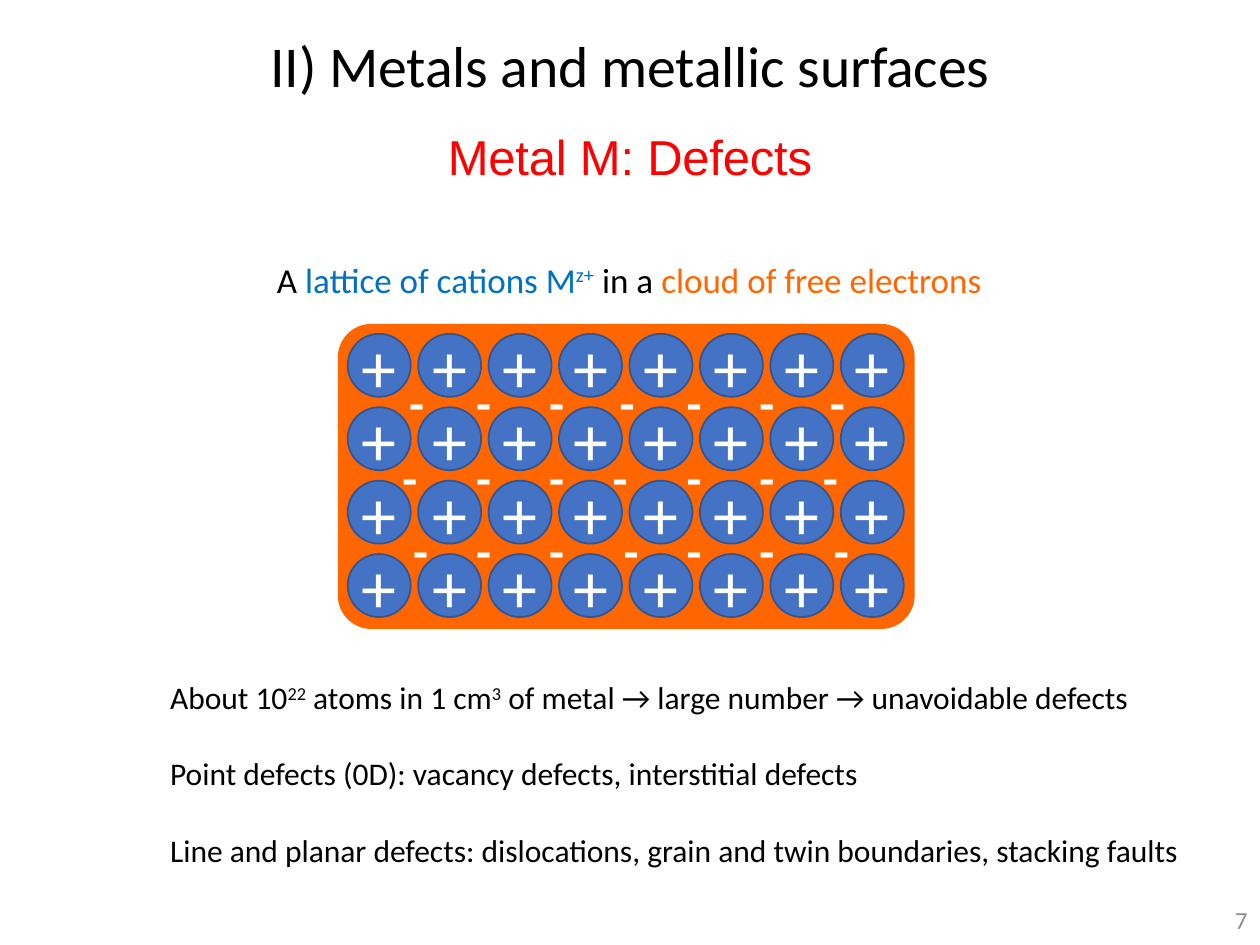
from itertools import product

from pptx import Presentation
from pptx import util as u
from pptx.dml.color import RGBColor
from pptx.enum import shapes, text

BLACK = RGBColor(0x00, 0x00, 0x00)
WHITE = RGBColor(0xFF, 0xFF, 0xFF)
RED = RGBColor(0xFF, 0x00, 0x00)
ORANGE = RGBColor(0xFF, 0x66, 0x00)
BLUE = RGBColor(0x00, 0x70, 0xC0)
CATION_FILL = RGBColor(0x44, 0x72, 0xC4)
CATION_EDGE = RGBColor(0x32, 0x54, 0x91)
GREY = RGBColor(0x8C, 0x8C, 0x8C)

LEFT, CENTER, RIGHT = text.PP_ALIGN.LEFT, text.PP_ALIGN.CENTER, text.PP_ALIGN.RIGHT
TOP, MIDDLE = text.MSO_ANCHOR.TOP, text.MSO_ANCHOR.MIDDLE
SUPERSCRIPT = "30000"


def write(holder, paragraphs, size, color=BLACK, font="Calibri", bold=False,
          align=LEFT, anchor=TOP, insets=(0.25, 0.13), before=0, gap=0,
          tracking=None, grow=True):
    frame = holder.text_frame
    frame.word_wrap = True
    frame.vertical_anchor = anchor
    frame.auto_size = (text.MSO_AUTO_SIZE.SHAPE_TO_FIT_TEXT if grow
                       else text.MSO_AUTO_SIZE.NONE)
    side, edge = insets
    frame.margin_left = frame.margin_right = u.Cm(side)
    frame.margin_top = frame.margin_bottom = u.Cm(edge)
    for index, pieces in enumerate(paragraphs):
        line = frame.add_paragraph() if index else frame.paragraphs[0]
        line.alignment = align
        line.space_before = u.Pt(gap if index else before)
        for words, *style in pieces:
            run = line.add_run()
            run.text = words
            run.font.name = font
            run.font.size = u.Pt(size)
            run.font.bold = bold
            run.font.color.rgb = next(
                (s for s in style if isinstance(s, RGBColor)), color)
            properties = run.font._element
            if SUPERSCRIPT in style:
                properties.set("baseline", SUPERSCRIPT)
            if tracking:
                properties.set("spc", str(int(tracking * 100)))


def add_text(parent, box, paragraphs, size, **style):
    holder = parent.shapes.add_textbox(*map(u.Cm, box))
    write(holder, paragraphs, size, **style)


def add_figure(parent, preset, box, fill, edge=None):
    figure = parent.shapes.add_shape(preset, *map(u.Cm, box))
    figure.shadow.inherit = False
    figure.fill.solid()
    figure.fill.fore_color.rgb = fill
    if edge is None:
        figure.line.fill.background()
    else:
        figure.line.color.rgb = edge
        figure.line.width = u.Pt(1)
    return figure


def add_heading(slide, box, words, size, **style):
    add_text(slide, box, [[(words,)]], size, align=CENTER, insets=(0, 0.02),
             before=1, tracking=-0.1, **style)


def add_cations(lattice, columns=8, rows=4):
    for column, row in product(range(columns), range(rows)):
        box = (7.01 + 1.42 * column, 6.73 + 1.48 * row, 1.27, 1.27)
        cation = add_figure(lattice, shapes.MSO_SHAPE.OVAL, box,
                            CATION_FILL, CATION_EDGE)
        write(cation, [[("+",)]], 40, color=WHITE, align=CENTER,
              anchor=MIDDLE, insets=(0, 0.13), grow=False)


def add_electrons(lattice, columns=7):
    starts = (8, 9.35, 10.82)
    row_tops = (7.38, 8.89, 10.36)
    row_shifts = (0, -0.14, 0.08)
    for column, (top, shift) in product(range(columns), zip(row_tops, row_shifts)):
        period, place = divmod(column, 3)
        left = starts[place] + 4.24 * period + (0 if place else shift)
        add_text(lattice, (left, top, 1.07, 1.45), [[("-",)]], 28,
                 color=WHITE, bold=True)


def add_lattice(slide):
    lattice = slide.shapes.add_group_shape()
    cloud = add_figure(lattice, shapes.MSO_SHAPE.ROUNDED_RECTANGLE,
                       (6.81, 6.53, 11.63, 6.15), ORANGE)
    cloud.adjustments[0] = 0.11
    caption = [("A ",), ("lattice of cations M", BLUE), ("z+", BLUE, SUPERSCRIPT),
               (" in a ",), ("cloud of free electrons", ORANGE)]
    add_text(lattice, (4.06, 5.08, 17.25, 1.12), [caption], 20, align=CENTER)
    add_cations(lattice)
    add_electrons(lattice)


def main():
    deck = Presentation()
    deck.slide_width, deck.slide_height = u.Cm(25.4), u.Cm(19.05)
    slide = deck.slides.add_slide(deck.slide_layouts[6])

    add_heading(slide, (2.54, 0.58, 20.32, 1.45),
                "II) Metals and metallic surfaces", 33, anchor=MIDDLE)
    add_heading(slide, (4.52, 2.54, 16.36, 1.24), "Metal M: Defects", 28,
                color=RED, font="Arial")
    add_lattice(slide)

    defects = [
        [("About 10",), ("22", SUPERSCRIPT), (" atoms in 1 cm",), ("3", SUPERSCRIPT),
         (" of metal → large number → unavoidable defects",)],
        [("Point defects (0D): vacancy defects, interstitial defects",)],
        [("Line and planar defects: dislocations, grain and twin boundaries, "
          "stacking faults",)],
    ]
    add_text(slide, (3.18, 13.54, 20.96, 4.11), defects, 18, gap=22)
    add_text(slide, (19.69, 18.03, 5.71, 1.02), [[("7",)]], 14, color=GREY,
             align=RIGHT, anchor=MIDDLE, grow=False)
    deck.save("out.pptx")


if __name__ == "__main__":
    main()
